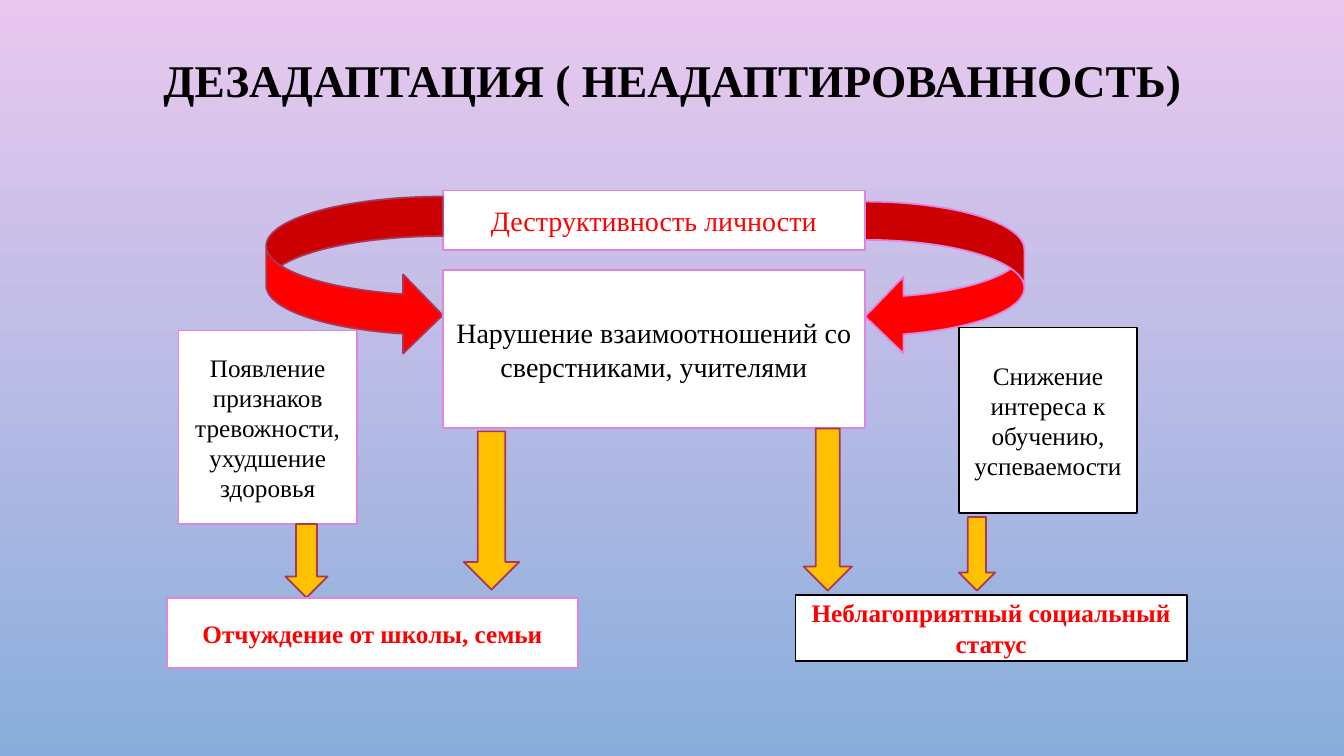
from typing import NamedTuple

from pptx import Presentation
from pptx.dml.color import RGBColor
from pptx.enum import shapes, text
from pptx.util import Inches, Pt

COLORS = {
    "sky_top": "E9C8EF", "sky_bottom": "89AEDB", "white": "FFFFFF", "black": "000000",
    "red": "FF0000", "pink": "DE85E1", "plum": "A8375A", "amber": "FFC000",
}
FONT = "Times New Roman"
KIND = shapes.MSO_SHAPE


class Place(NamedTuple):
    left: float
    top: float
    width: float
    height: float


class Box(NamedTuple):
    place: Place
    label: str
    size: float = 18
    color: str = "black"
    bold: bool = False
    line: str = "pink"


class Arrow(NamedTuple):
    place: Place
    kind: KIND = KIND.DOWN_ARROW
    fill: str = "amber"
    line: str = "plum"


TITLE = Box(Place(1.21, 0.41, 10.92, 0.82), "ДЕЗАДАПТАЦИЯ ( НЕАДАПТИРОВАННОСТЬ)", 32.4, bold=True)

# Back to front
DIAGRAM = [
    Box(Place(4.39, 1.89, 4.19, 0.59), "Деструктивность личности", 20, "red"),
    Arrow(Place(2.64, 1.95, 1.75, 1.57), KIND.CURVED_RIGHT_ARROW, "red"),
    Arrow(Place(8.58, 2, 1.58, 1.52), KIND.CURVED_LEFT_ARROW, "red", "pink"),
    Box(Place(4.39, 2.68, 4.19, 1.57), "Нарушение взаимоотношений со сверстниками, учителями", 20),
    Box(Place(1.77, 3.28, 1.77, 1.92), "Появление признаков тревожности, ухудшение здоровья"),
    Box(Place(9.51, 3.25, 1.77, 1.84), "Снижение интереса к обучению, успеваемости", line="black"),
    Arrow(Place(2.83, 5.2, 0.42, 0.73)),
    Arrow(Place(4.6, 4.28, 0.55, 1.57)),
    Arrow(Place(7.97, 4.25, 0.48, 1.61)),
    Arrow(Place(9.51, 5.13, 0.36, 0.73)),
    Box(Place(1.66, 5.93, 4.07, 0.7), "Отчуждение от школы, семьи", color="red", bold=True),
    Box(Place(7.89, 5.9, 3.88, 0.66), "Неблагоприятный социальный статус",
        color="red", bold=True, line="black"),
]


def rgb(name: str) -> RGBColor:
    return RGBColor.from_string(COLORS[name])


def write(sp, box: Box) -> None:
    tf = sp.text_frame
    frame_format = {"word_wrap": True, "auto_size": text.MSO_AUTO_SIZE.NONE,
                    "vertical_anchor": text.MSO_ANCHOR.MIDDLE}
    for name, value in frame_format.items():
        setattr(tf, name, value)
    p = tf.paragraphs[0]
    p.alignment = text.PP_ALIGN.CENTER
    r = p.add_run()
    r.text = box.label
    for name, value in {"name": FONT, "size": Pt(box.size), "bold": box.bold}.items():
        setattr(r.font, name, value)
    r.font.color.rgb = rgb(box.color)


def add_preset(s, kind: KIND, place: Place, fill: str, line: str):
    sp = s.shapes.add_shape(kind, *map(Inches, place))
    sp.shadow.inherit = False
    sp.fill.solid()
    sp.fill.fore_color.rgb = rgb(fill)
    sp.line.color.rgb = rgb(line)
    sp.line.width = Pt(1.25)
    return sp


def paint_background(s) -> None:
    fill = s.background.fill
    fill.gradient()
    fill.gradient_angle = 270
    for stop, name in zip(fill.gradient_stops, ("sky_top", "sky_bottom")):
        stop.color.rgb = rgb(name)


def set_title(s) -> None:
    sp = s.shapes.title
    for name, value in TITLE.place._asdict().items():
        setattr(sp, name, Inches(value))
    write(sp, TITLE)
    sp.text_frame.paragraphs[0].line_spacing = 0.9


def main() -> None:
    prs = Presentation()
    prs.slide_width, prs.slide_height = Inches(13.33), Inches(7.5)
    s = prs.slides.add_slide(prs.slide_layouts[5])
    paint_background(s)
    set_title(s)
    for item in DIAGRAM:
        if isinstance(item, Box):
            write(add_preset(s, KIND.RECTANGLE, item.place, "white", item.line), item)
        else:
            add_preset(s, item.kind, item.place, item.fill, item.line)
    prs.save("out.pptx")


if __name__ == "__main__":
    main()
